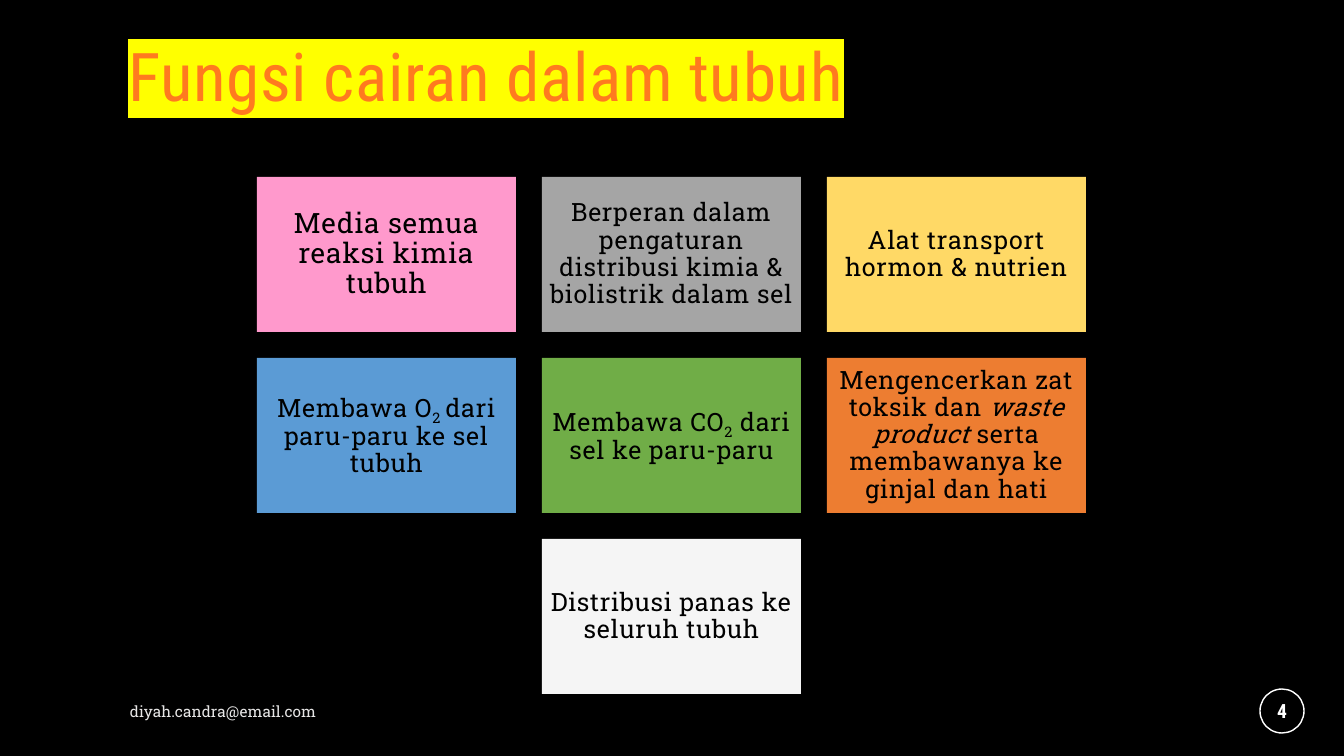
from lxml.etree import SubElement
from pptx import Presentation
from pptx.dml.color import RGBColor
from pptx.enum.shapes import MSO_SHAPE
from pptx.enum.text import MSO_ANCHOR, PP_ALIGN
from pptx.oxml.ns import qn
from pptx.util import Pt

COLOURS = {
    "background": "000000", "ink": "000000", "white": "FFFFFF", "footer": "E7E6E6",
    "title_top": "FF7A1F", "title_bottom": "CA5200", "highlight": "FFFF00",
    "outline": "0E1727", "pink": "FF99CC", "grey": "A5A5A5", "yellow": "FFD966",
    "blue": "5B9BD5", "green": "70AD47", "orange": "ED7D31", "light": "F5F5F5",
}
HEADING_FONT, BODY_FONT = "Roboto Condensed", "Roboto Slab"
EMU_PER_PX = 914400 / 100.8

CARD_ROWS = [
    [("pink", 20, [("Media semua reaksi kimia tubuh", "")]),
     ("grey", 18, [("Berperan dalam pengaturan distribusi kimia & biolistrik dalam sel", "")]),
     ("yellow", 18, [("Alat transport hormon & nutrien", "")])],
    [("blue", 18, [("Membawa O", ""), ("2 ", "subscript"),
                   ("dari paru-paru ke sel tubuh", "")]),
     ("green", 18, [("Membawa CO", ""), ("2", "subscript"),
                    (" dari sel ke paru-paru", "")]),
     ("orange", 18, [("Mengencerkan zat toksik dan ", ""), ("waste product", "italic"),
                     (" serta membawanya ke ginjal dan hati", "")])],
    [("light", 18, [("Distribusi panas ke seluruh tubuh", "")])],
]
COLUMNS = 3
CARD_LEFT, CARD_TOP, CARD_WIDTH, CARD_HEIGHT = 257, 177, 259, 155
COLUMN_STEP, ROW_STEP = 285, 181


def px(length):
    return round(length * EMU_PER_PX)


def rgb(name):
    return RGBColor.from_string(COLOURS[name])


class SlideBuilder:
    """Holds the current slide and draws its elements in one style."""

    def __init__(self, slide):
        self.slide = slide
        slide.background.fill.solid()
        slide.background.fill.fore_color.rgb = rgb("background")

    def frame(self, shape, inset=None, align=PP_ALIGN.LEFT):
        frame = shape.text_frame
        frame.word_wrap = True
        frame.vertical_anchor = MSO_ANCHOR.MIDDLE
        if inset is not None:
            frame.margin_left = frame.margin_right = px(inset)
            frame.margin_top = frame.margin_bottom = px(inset)
        paragraph = frame.paragraphs[0]
        paragraph.alignment = align
        return paragraph

    def run(self, paragraph, text, font, size, colour=None, bold=False):
        run = paragraph.add_run()
        run.text = text
        run.font.name, run.font.size, run.font.bold = font, Pt(size), bold
        if colour:
            run.font.fill.solid()
            run.font.fill.fore_color.rgb = rgb(colour)
        return run

    def colour_element(self, parent, tag, colour):
        holder = SubElement(parent, qn(tag))
        return SubElement(holder, qn("a:srgbClr"), val=COLOURS[colour])

    def title(self, text, left, top, width, height):
        title = self.slide.shapes.title
        title.left, title.top, title.width, title.height = map(px, (left, top, width, height))
        paragraph = self.frame(title)
        paragraph.line_spacing = 0.9
        run = self.run(paragraph, text, HEADING_FONT, 48)
        fill = run.font.fill
        fill.gradient()
        fill.gradient_angle = 270
        stops = ((0.25, "title_top"), (1, "title_bottom"))
        for stop, (position, colour) in zip(fill.gradient_stops, stops):
            stop.position = position
            stop.color.rgb = rgb(colour)
        properties = run.font._element
        properties.set("spc", "50")
        self.colour_element(properties, "a:highlight", "highlight")
        properties.find(qn("a:gradFill")).addnext(properties[-1])

    def shape(self, kind, left, top, width, height):
        shape = self.slide.shapes.add_shape(kind, *map(px, (left, top, width, height)))
        shape.shadow.inherit = False
        return shape

    def card(self, left, top, colour, size, runs):
        card = self.shape(MSO_SHAPE.RECTANGLE, left, top, CARD_WIDTH, CARD_HEIGHT)
        card.fill.solid()
        card.fill.fore_color.rgb = rgb(colour)
        card.line.fill.background()
        paragraph = self.frame(card, 7, PP_ALIGN.CENTER)
        paragraph.line_spacing = 0.9
        for text, style in runs:
            run = self.run(paragraph, text, BODY_FONT, size, "ink")
            run.font.italic = style == "italic"
            properties = run.font._element
            properties.set("spc", "50")
            if style == "subscript":
                properties.set("baseline", "-25000")
            outline = SubElement(properties, qn("a:ln"), w=str(Pt(1.06)))
            colour_value = self.colour_element(outline, "a:solidFill", "outline")
            SubElement(colour_value, qn("a:alpha"), val="6000")
            properties.insert(0, outline)

    def page_number(self, text, left, top, size):
        badge = self.shape(MSO_SHAPE.OVAL, left, top, size, size)
        badge.fill.background()
        badge.line.color.rgb = rgb("white")
        badge.line.width = Pt(1)
        self.run(self.frame(badge, 0, PP_ALIGN.CENTER), text, HEADING_FONT, 14, "white", True)

    def footer(self, text, left, top, width, height):
        box = self.slide.shapes.add_textbox(*map(px, (left, top, width, height)))
        self.run(self.frame(box), text, BODY_FONT, 11, "footer")


def main():
    presentation = Presentation()
    presentation.slide_width, presentation.slide_height = px(1344), px(756)
    builder = SlideBuilder(presentation.slides.add_slide(presentation.slide_layouts[5]))
    builder.title("Fungsi cairan dalam tubuh", 118, -9, 1109, 177)
    for row, cards in enumerate(CARD_ROWS):
        first_column = (COLUMNS - len(cards)) // 2
        for column, (colour, size, runs) in enumerate(cards, first_column):
            builder.card(CARD_LEFT + column * COLUMN_STEP, CARD_TOP + row * ROW_STEP,
                         colour, size, runs)
    builder.footer("diyah.candra@email.com", 120, 691, 698, 40)
    builder.page_number("4", 1260, 689, 44)
    presentation.save("out.pptx")


if __name__ == "__main__":
    main()
